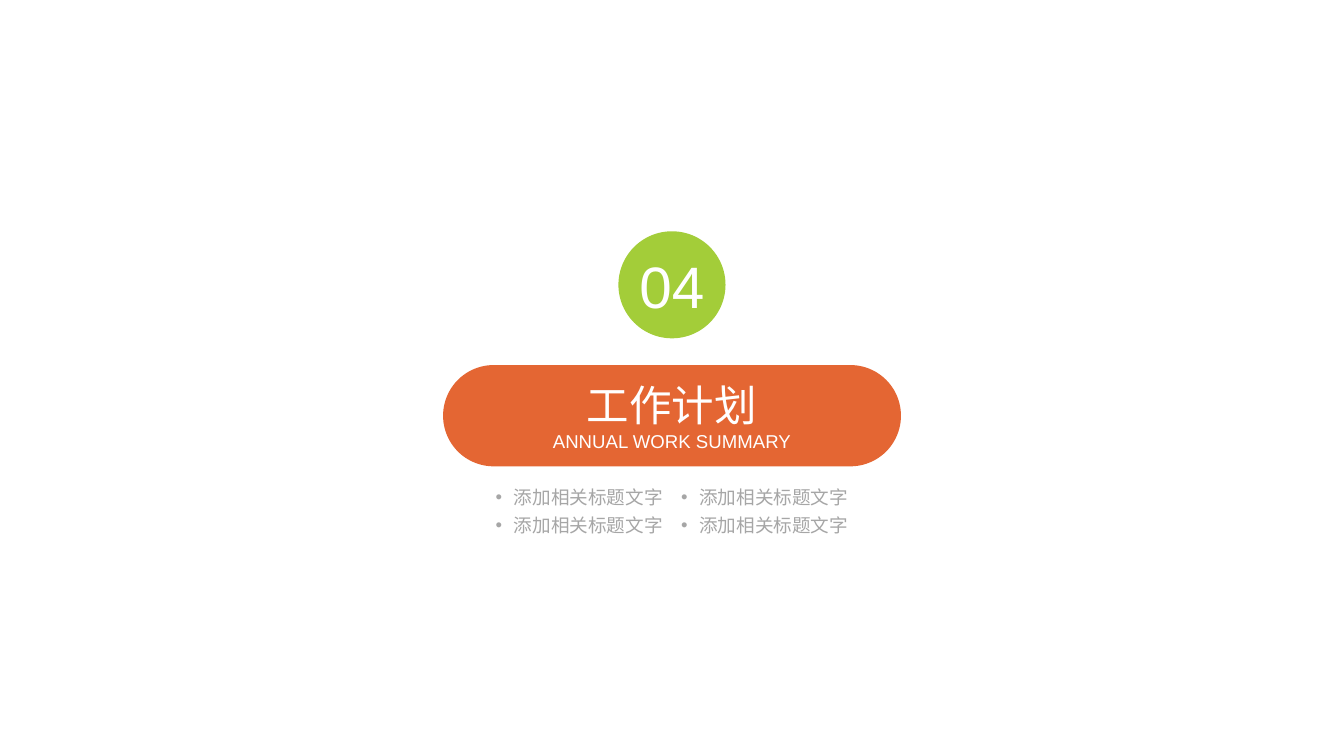
from dataclasses import dataclass
from itertools import product

from lxml.etree import SubElement
from pptx import Presentation
from pptx.dml.color import RGBColor
from pptx.enum.shapes import MSO_SHAPE
from pptx.enum.text import MSO_ANCHOR, MSO_AUTO_SIZE, PP_ALIGN
from pptx.oxml.ns import qn
from pptx.util import Inches, Pt

SLIDE_WIDTH, SLIDE_HEIGHT = Inches(14.06), Inches(7.91)
FONT = "Arial"
ORANGE, GREEN, WHITE, GRAY = "E46633", "A3CD39", "FFFFFF", "A6A6A6"


@dataclass(frozen=True)
class Frame:
    """A place on the slide, in percent of its width and height."""
    top: float
    width: float
    height: float
    center: float = 50

    def lengths(self) -> tuple[int, int, int, int]:
        left = self.center - self.width / 2
        return (int(SLIDE_WIDTH * left / 100), int(SLIDE_HEIGHT * self.top / 100),
                int(SLIDE_WIDTH * self.width / 100), int(SLIDE_HEIGHT * self.height / 100))


NUMBER_CIRCLE = Frame(top=30.59, width=7.97, height=14.16)
TITLE_PILL = Frame(top=48.29, width=34.07, height=13.4)
TITLE_TEXT = Frame(top=50.06, width=19.7, height=9.73)
TOPIC_CENTERS = (43.1, 56.9)
TOPIC_TOPS = (64.22, 68.02)


def color(value: str) -> RGBColor:
    return RGBColor.from_string(value)


def add_filled(page, kind: MSO_SHAPE, frame: Frame, fill: str):
    shape = page.shapes.add_shape(kind, *frame.lengths())
    shape.shadow.inherit = False
    shape.fill.solid()
    shape.fill.fore_color.rgb = color(fill)
    shape.line.fill.background()
    return shape


def write(box, text: str, sizes: tuple[int, ...], ink: str,
          anchor: MSO_ANCHOR = MSO_ANCHOR.MIDDLE, wrap: bool = True) -> None:
    """Fill the box with centred lines, one size for each line."""
    text_frame = box.text_frame
    text_frame.text = text
    text_frame.word_wrap = wrap
    text_frame.auto_size = MSO_AUTO_SIZE.NONE
    text_frame.vertical_anchor = anchor
    text_frame.margin_left = text_frame.margin_right = 0
    text_frame.margin_top = text_frame.margin_bottom = 0
    for paragraph, size in zip(text_frame.paragraphs, sizes):
        paragraph.alignment = PP_ALIGN.CENTER
        for span in paragraph.runs:
            span.font.name = FONT
            span.font.size = Pt(size)
            span.font.color.rgb = color(ink)


def add_bullet(paragraph, indent: int) -> None:
    properties = paragraph._p.get_or_add_pPr()
    properties.set("marL", str(indent))
    properties.set("indent", str(-indent))
    SubElement(properties, qn("a:buFont"), typeface=FONT)
    SubElement(properties, qn("a:buChar"), char="•")


def add_topic(page, frame: Frame) -> None:
    box = page.shapes.add_textbox(*frame.lengths())
    write(box, "添加相关标题文字", (14,), GRAY, MSO_ANCHOR.TOP, wrap=False)
    add_bullet(box.text_frame.paragraphs[0], Inches(0.19))


def add_title(page) -> None:
    pill = add_filled(page, MSO_SHAPE.ROUNDED_RECTANGLE, TITLE_PILL, ORANGE)
    pill.adjustments[0] = 0.5
    title = page.shapes.title
    title.left, title.top, title.width, title.height = TITLE_TEXT.lengths()
    write(title, "工作计划\nANNUAL WORK SUMMARY", (32, 14), WHITE)
    pill.element.addnext(title.element)


def main() -> None:
    deck = Presentation()
    deck.slide_width, deck.slide_height = SLIDE_WIDTH, SLIDE_HEIGHT
    page = deck.slides.add_slide(deck.slide_layouts[5])
    add_title(page)
    circle = add_filled(page, MSO_SHAPE.OVAL, NUMBER_CIRCLE, GREEN)
    write(circle, "04", (44,), WHITE)
    for top, center in product(TOPIC_TOPS, TOPIC_CENTERS):
        add_topic(page, Frame(top, width=12.52, height=3.03, center=center))
    deck.save("out.pptx")


if __name__ == "__main__":
    main()
